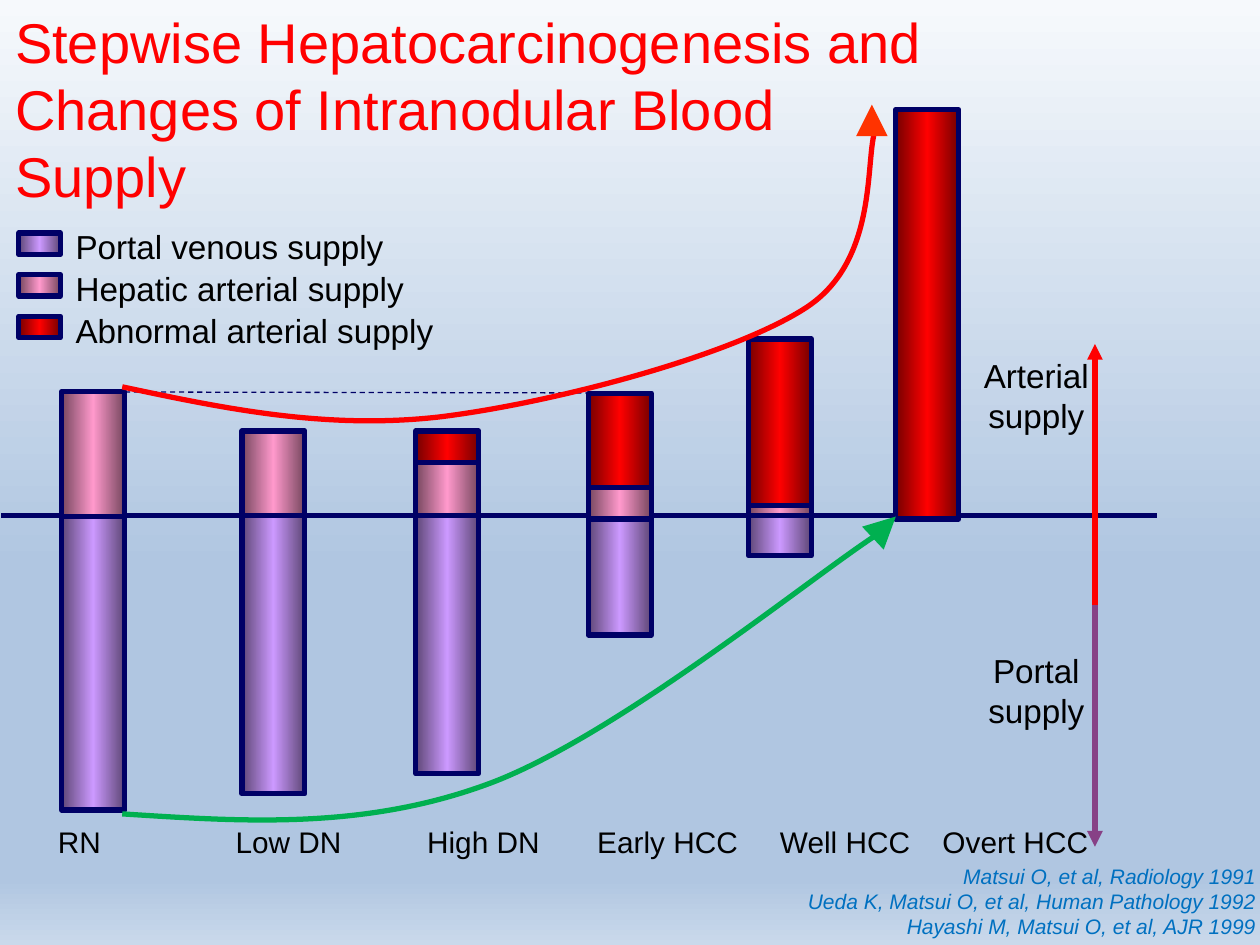
"""Build the slide on stepwise hepatocarcinogenesis and nodular blood supply."""
import pptx
import pptx.dml.color
import pptx.enum.dml
import pptx.enum.shapes
import pptx.enum.text
import pptx.oxml
import pptx.oxml.ns
import pptx.util
from lxml import etree

Inches = pptx.util.Inches
ALIGN = pptx.enum.text.PP_ALIGN
NAVY, RED, GREEN = "000066", "FF0000", "00B050"
BACKDROP = [(0, "F6F9FC"), (60, "B0C6E1"), (93, "B0C6E1"), (100, "CAD9EB")]
TITLE = ["Stepwise Hepatocarcinogenesis and", "Changes of Intranodular Blood Supply"]
SUPPLIES = {
    "portal": ("Portal venous supply", "5E4776", "CC99FF"),
    "hepatic": ("Hepatic arterial supply", "76475E", "FF99CC"),
    "abnormal": ("Abnormal arterial supply", "760000", "FF0000"),
}
# stage, bar left, label left, segments as (supply, top, bottom)
STAGES = [
    ("RN", 0.49, 0.46, [("hepatic", 3.11, 4.11), ("portal", 4.1, 6.43)]),
    ("Low DN", 1.92, 1.87, [("hepatic", 3.42, 4.09), ("portal", 4.09, 6.3)]),
    ("High DN", 3.3, 3.39, [("hepatic", 3.67, 4.09), ("portal", 4.09, 6.14),
                            ("abnormal", 3.42, 3.67)]),
    ("Early HCC", 4.67, 4.74, [("hepatic", 3.87, 4.12), ("portal", 4.12, 5.04),
                               ("abnormal", 3.12, 3.87)]),
    ("Well HCC", 5.94, 6.19, [("hepatic", 3.87, 4.09), ("portal", 4.09, 4.41),
                              ("abnormal", 2.69, 4.01)]),
    ("Overt HCC", 7.11, 7.48, [("abnormal", 0.87, 4.12)]),
]
BAR_WIDTH = 0.5
DIRECTIONS = [("Arterial supply", 2.76, 2.73, RED), ("Portal supply", 5.1, 6.72, "874186")]
DIRECTION_X, DIRECTION_MIDDLE = 8.69, 4.8
ARTERIAL_TREND = [(0.97, 3.07), (1.77, 3.24), (2.58, 3.41), (3.48, 3.31), (4.39, 3.2),
                  (5.82, 2.82), (6.4, 2.44), (6.98, 2.06), (6.86, 1.26), (6.95, 1.02)]
PORTAL_TREND = [(0.97, 6.46), (1.92, 6.52), (2.88, 6.59), (3.88, 6.22),
                (4.88, 5.85), (6.44, 4.58), (6.95, 4.25)]
CITATIONS = ["Matsui O, et al, Radiology 1991",
             "Ueda K, Matsui O, et al, Human Pathology 1992",
             "Hayashi M, Matsui O, et al, AJR 1999"]


def rgb(value):
    return pptx.dml.color.RGBColor.from_string(value)


def add_xml(parent, tag, **attributes):
    return etree.SubElement(parent, pptx.oxml.ns.qn(tag), attributes)


def paint_gradient(fill, element, stops, angle=0):
    fill.gradient()
    fill.gradient_angle = angle
    stop_list = element.xpath(".//a:gsLst")[0]
    for stop in list(stop_list):
        stop_list.remove(stop)
    for position, color in stops:
        stop = add_xml(stop_list, "a:gs", pos=str(position * 1000))
        add_xml(stop, "a:srgbClr", val=color)


def set_line(line, color, width):
    line.color.rgb = rgb(color)
    line.width = pptx.util.Pt(width)


def write(frame, lines, size, color="000000", align=ALIGN.LEFT, italic=False,
          wrap=True, tabs=()):
    frame.word_wrap = wrap
    frame.vertical_anchor = pptx.enum.text.MSO_ANCHOR.TOP
    frame.margin_left = frame.margin_right = Inches(0.12)
    frame.margin_top = frame.margin_bottom = Inches(0.06)
    for index, line in enumerate(lines):
        paragraph = frame.add_paragraph() if index else frame.paragraphs[0]
        paragraph.text = line
        paragraph.alignment = align
        paragraph.line_spacing = 1.0
        paragraph.space_before = pptx.util.Pt(0)
        if tabs:
            tab_list = add_xml(paragraph._p.get_or_add_pPr(), "a:tabLst")
            for tab in tabs:
                add_xml(tab_list, "a:tab", pos=str(Inches(tab)), algn="l")
        for run in paragraph.runs:
            run.font.name = "Arial"
            run.font.size = pptx.util.Pt(size)
            run.font.italic = italic
            run.font.color.rgb = rgb(color)


def add_text(slide, box, lines, size, **style):
    write(slide.shapes.add_textbox(*map(Inches, box)).text_frame, lines, size, **style)


def add_block(slide, box, supply):
    _, edge, middle = SUPPLIES[supply]
    block = slide.shapes.add_shape(pptx.enum.shapes.MSO_SHAPE.RECTANGLE, *map(Inches, box))
    block.shadow.inherit = False
    paint_gradient(block.fill, block.element, [(0, edge), (50, middle), (100, edge)])
    set_line(block.line, NAVY, 3)


def add_line(slide, start, end, color, width=3, arrow=False, dashed=False):
    connector = slide.shapes.add_connector(
        pptx.enum.shapes.MSO_CONNECTOR.STRAIGHT, *map(Inches, start + end))
    set_line(connector.line, color, width)
    if dashed:
        connector.line.dash_style = pptx.enum.dml.MSO_LINE.DASH
    if arrow:
        add_xml(connector.element.xpath(".//a:ln")[0], "a:tailEnd", type="triangle")
    add_xml(connector.element.spPr, "a:effectLst")


def add_trend(slide, points, color):
    start, *controls = [(Inches(x), Inches(y)) for x, y in points]
    builder = slide.shapes.build_freeform(*start)
    builder.add_line_segments(controls, close=False)
    trend = builder.convert_to_shape()
    segments = trend.element.xpath(".//a:lnTo")
    for first in range(0, len(segments), 3):
        curve = etree.Element(pptx.oxml.ns.qn("a:cubicBezTo"))
        segments[first].addprevious(curve)
        for segment in segments[first:first + 3]:
            curve.append(segment[0])
            segment.getparent().remove(segment)
    trend.shadow.inherit = False
    trend.fill.background()
    set_line(trend.line, color, 3)


def main():
    deck = pptx.Presentation()
    deck.slide_width, deck.slide_height = Inches(10), Inches(7.5)
    slide = deck.slides.add_slide(deck.slide_layouts[5])
    paint_gradient(slide.background.fill, slide.element, BACKDROP, angle=270)

    title = slide.shapes.title
    title.left, title.top, title.width, title.height = map(Inches, (0, 0, 7.59, 1.74))
    write(title.text_frame, TITLE, 32, color=RED)

    add_line(slide, (0.01, 4.09), (9.18, 4.09), NAVY)
    for _, left, _, segments in STAGES:
        for supply, top, bottom in segments:
            add_block(slide, (left, top, BAR_WIDTH, bottom - top), supply)
    label_lefts = [stage[2] for stage in STAGES]
    add_text(slide, (label_lefts[0] - 0.12, 6.48, 8.6, 0.4),
             ["\t".join(stage[0] for stage in STAGES)], 17,
             tabs=[left - label_lefts[0] for left in label_lefts[1:]])

    for row, (supply, (label, _, _)) in enumerate(SUPPLIES.items()):
        offset = row * 0.33
        add_block(slide, (0.15, 1.85 + offset, 0.33, 0.17), supply)
        add_text(slide, (0.48, 1.74 + offset, 3.13, 0.44), [label], 19, wrap=False)

    for label, top, tip, color in DIRECTIONS:
        add_line(slide, (DIRECTION_X, DIRECTION_MIDDLE), (DIRECTION_X, tip), color, arrow=True)
        add_text(slide, (7.59, top, 1.27, 0.76), [label], 19, align=ALIGN.CENTER)

    add_line(slide, (0.49, 3.11), (5.17, 3.12), NAVY, width=0.75, dashed=True)
    add_trend(slide, ARTERIAL_TREND, RED)
    add_line(slide, (6.92, 0.91), (6.92, 0.83), "FF3300", width=6, arrow=True)
    add_trend(slide, PORTAL_TREND, GREEN)
    add_line(slide, (6.95, 4.25), (7.11, 4.1), GREEN, width=6, arrow=True)
    add_text(slide, (6.26, 6.79, 3.83, 0.73), CITATIONS, 12, color="0070C0",
             align=ALIGN.RIGHT, italic=True, wrap=False)
    deck.save("out.pptx")


if __name__ == "__main__":
    main()
